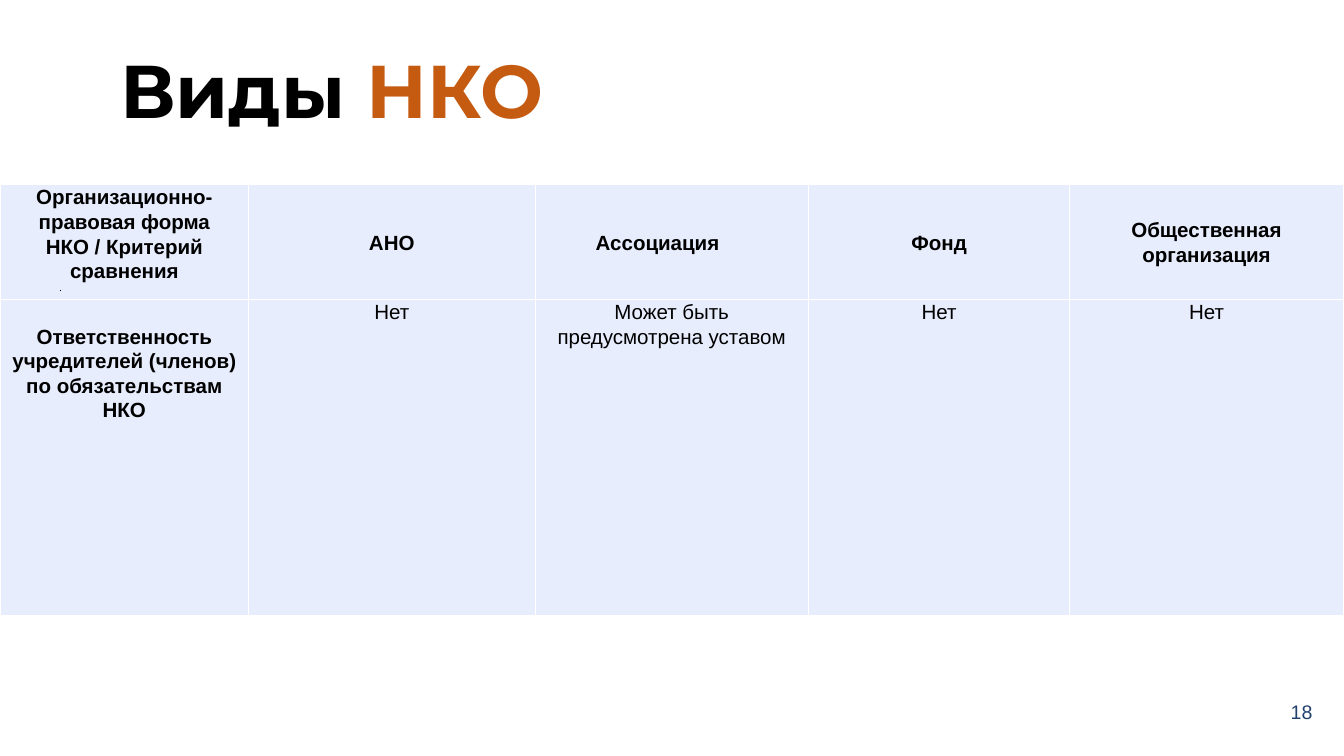
import lxml.etree
import pptx
import pptx.dml.color
import pptx.enum.shapes
import pptx.enum.text
import pptx.oxml.ns
import pptx.util

Inches, Pt = pptx.util.Inches, pptx.util.Pt
Align, Anchor = pptx.enum.text.PP_ALIGN, pptx.enum.text.MSO_ANCHOR
qn = pptx.oxml.ns.qn

BLACK, WHITE, RUST, NAVY, PALE = "000000", "FFFFFF", "C55A11", "22416D", "E8EDFD"
WIDTHS = [3.7, 4.26, 4.07, 3.89, 4.07]
HEIGHTS = [1.71, 4.7]
ROWS = [
    ["Организационно-правовая форма НКО / Критерий сравнения",
     "АНО", "Ассоциация", "Фонд", "Общественная организация"],
    ["Ответственность учредителей (членов) по обязательствам НКО",
     "Нет", "Может быть предусмотрена уставом", "Нет", "Нет"],
]


def rgb(code):
    return pptx.dml.color.RGBColor.from_string(code)


def style(run, face, size, color, bold=False):
    run.font.name = face
    run.font.size = Pt(size)
    run.font.bold = bold
    run.font.color.rgb = rgb(color)


def place(shape, box):
    shape.left, shape.top, shape.width, shape.height = map(Inches, box)


def pad(frame, gap):
    frame.margin_left = frame.margin_right = Inches(gap)
    frame.margin_top = frame.margin_bottom = Inches(gap)
    frame.word_wrap = True


def add_title(slide, box):
    title = slide.shapes.title
    place(title, box)
    frame = title.text_frame
    pad(frame, 0.15)
    frame.auto_size = pptx.enum.text.MSO_AUTO_SIZE.NONE
    frame.vertical_anchor = Anchor.TOP
    para = frame.paragraphs[0]
    para.alignment = Align.LEFT
    para.line_spacing = 1.0
    for text, color in (("Виды ", BLACK), ("НКО", RUST)):
        run = para.add_run()
        run.text = text
        style(run, "Montserrat", 80, color, True)


def add_number(slide, box):
    frame = slide.shapes.add_textbox(*map(Inches, box)).text_frame
    pad(frame, 0.15)
    frame.vertical_anchor = Anchor.MIDDLE
    frame.text = "18"
    para = frame.paragraphs[0]
    para.alignment = Align.CENTER
    style(para.runs[0], "Arial", 21, NAVY)


def add_edges(cell, color, width):
    props = cell._tc.get_or_add_tcPr()
    for spot, side in enumerate(("lnL", "lnR", "lnT", "lnB")):
        line = lxml.etree.Element(qn("a:" + side), w=str(Pt(width)))
        fill = lxml.etree.SubElement(line, qn("a:solidFill"))
        lxml.etree.SubElement(fill, qn("a:srgbClr"), val=color)
        props.insert(spot, line)


def fill_cell(cell, text, bold):
    cell.fill.solid()
    cell.fill.fore_color.rgb = rgb(PALE)
    cell.margin_left = cell.margin_right = Inches(0.14)
    cell.margin_top = cell.margin_bottom = 0
    cell.text_frame.text = text
    para = cell.text_frame.paragraphs[0]
    para.alignment = Align.CENTER
    para.line_spacing = 1.07
    style(para.runs[0], "Arial", 22, BLACK, bold)
    add_edges(cell, WHITE, 1)


def add_grid(slide, left, top):
    box = map(Inches, (left, top, sum(WIDTHS), sum(HEIGHTS)))
    table = slide.shapes.add_table(len(ROWS), len(WIDTHS), *box).table
    table.first_row = table.horz_banding = False
    for col, width in zip(table.columns, WIDTHS):
        col.width = Inches(width)
    for row, height in zip(table.rows, HEIGHTS):
        row.height = Inches(height)
    for r, texts in enumerate(ROWS):
        for c, text in enumerate(texts):
            cell = table.cell(r, c)
            fill_cell(cell, text, bold=r == 0 or c == 0)
            head = r == 0 and c > 0
            cell.vertical_anchor = Anchor.MIDDLE if head else Anchor.TOP
    # One heading sits left of centre, the row label one line lower
    table.cell(0, 2).margin_right = Inches(0.56)
    table.cell(1, 0).margin_top = Inches(0.36)


def add_tick(slide, left, top):
    kind = pptx.enum.shapes.MSO_CONNECTOR.STRAIGHT
    ends = map(Inches, (left, top + 0.01, left, top))
    line = slide.shapes.add_connector(kind, *ends)
    line.line.color.rgb = rgb(BLACK)
    line.line.width = Pt(0.75)
    lxml.etree.SubElement(line._element.spPr, qn("a:effectLst"))


def main():
    deck = pptx.Presentation()
    deck.slide_width, deck.slide_height = Inches(20), Inches(11.25)
    slide = deck.slides.add_slide(deck.slide_layouts[5])
    slide.background.fill.solid()
    slide.background.fill.fore_color.rgb = rgb(WHITE)
    add_title(slide, (1.64, 0.5, 17.92, 7.52))
    add_number(slide, (19, 10.27, 0.74, 0.65))
    add_grid(slide, 0, 2.75)
    add_tick(slide, 0.9, 4.32)
    deck.save("out.pptx")


if __name__ == "__main__":
    main()
